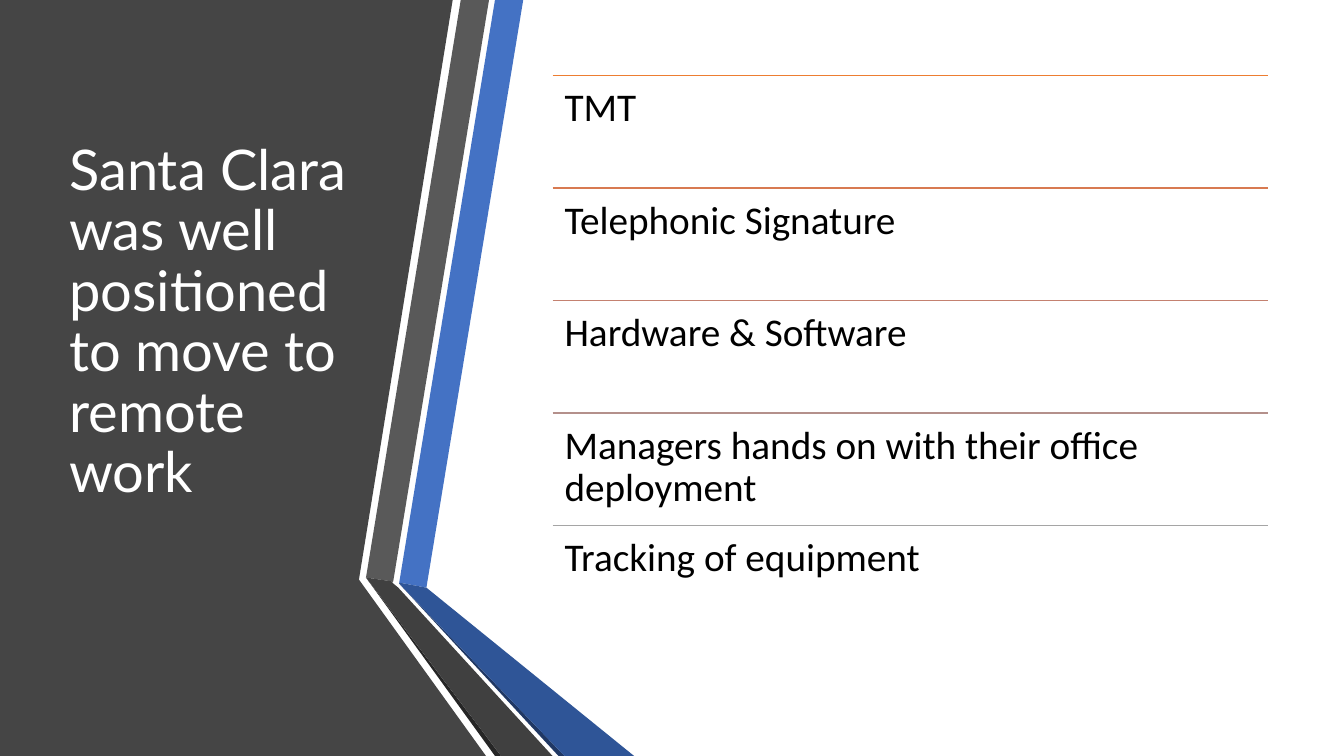
from collections import namedtuple

from lxml.etree import SubElement
from pptx import Presentation
from pptx.dml.color import RGBColor
from pptx.enum.shapes import MSO_CONNECTOR as Connector
from pptx.enum.text import MSO_ANCHOR as Anchor, PP_ALIGN as Align
from pptx.oxml.ns import qn
from pptx.util import Inches, Pt

Box = namedtuple("Box", "left top width height")

WIDTH, HEIGHT = 13.33, 7.5
WHITE = RGBColor(0xFF, 0xFF, 0xFF)
BLACK = RGBColor(0x00, 0x00, 0x00)
CHARCOAL = RGBColor(0x45, 0x45, 0x45)
GREY = RGBColor(0x59, 0x59, 0x59)
DARK_GREY = RGBColor(0x40, 0x40, 0x40)
DEEP_GREY = RGBColor(0x26, 0x26, 0x26)
BLUE = RGBColor(0x44, 0x72, 0xC4)
DARK_BLUE = RGBColor(0x2F, 0x55, 0x97)
DEEP_BLUE = RGBColor(0x20, 0x38, 0x64)

PANEL = [(0, 0), (4.49, 0), (3.56, 5.75), (4.82, 7.5), (0, 7.5)]
RIBBONS = [
    (BLUE, [(3.96, 5.78), (4.23, 5.83), (5.19, 0), (4.91, 0)]),
    (GREY, [(4.85, 0), (4.57, 0), (3.63, 5.73), (3.9, 5.77)]),
    (DEEP_GREY, [(3.63, 5.73), (4.91, 7.5), (4.97, 7.5)]),
    (DEEP_BLUE, [(3.96, 5.79), (5.54, 7.5), (5.6, 7.5)]),
    (DARK_BLUE, [(3.96, 5.79), (5.6, 7.5), (6.29, 7.5), (4.23, 5.83), (3.96, 5.78)]),
    (DARK_GREY, [(5.48, 7.5), (3.95, 5.83), (3.89, 5.78), (3.9, 5.77),
                 (3.63, 5.73), (4.97, 7.5)]),
]
TITLE = "Santa Clara was well positioned to move to remote work"
ITEMS = [
    ("TMT", RGBColor(0xED, 0x7D, 0x31)),
    ("Telephonic Signature", RGBColor(0xD8, 0x7A, 0x51)),
    ("Hardware & Software", RGBColor(0xC4, 0x81, 0x70)),
    ("Managers hands on with their office deployment", RGBColor(0xB4, 0x90, 0x8B)),
    ("Tracking of equipment", RGBColor(0xA5, 0xA5, 0xA5)),
]


def add_polygon(shapes, box, points, color):
    corners = [(Inches(x), Inches(y)) for x, y in points]
    builder = shapes.build_freeform(*corners[0])
    builder.add_line_segments(corners[1:], close=True)
    shape = builder.convert_to_shape(Inches(box.left), Inches(box.top))
    shape.shadow.inherit = False
    shape.fill.solid()
    shape.fill.fore_color.rgb = color
    shape.line.fill.background()


def add_text(shapes, box, text, font, frame):
    text_frame = shapes.add_textbox(*map(Inches, box)).text_frame
    for name, value in {"word_wrap": True, **frame}.items():
        setattr(text_frame, name, value)
    paragraph = text_frame.paragraphs[0]
    paragraph.alignment = Align.LEFT
    paragraph.line_spacing = 0.9
    run = paragraph.add_run()
    run.text = text
    for name in ("name", "size"):
        setattr(run.font, name, font[name])
    run.font.color.rgb = font["color"]


def add_rule(shapes, left, top, width, color):
    rule = shapes.add_connector(
        Connector.STRAIGHT, *map(Inches, (left, top, left + width, top)))
    rule.line.color.rgb = color
    rule.line.width = Pt(1)
    SubElement(rule._element.spPr, qn("a:effectLst"))


def draw_backdrop(slide, box):
    add_polygon(slide.shapes, box, PANEL, CHARCOAL)
    ribbons = slide.shapes.add_group_shape().shapes
    for color, points in RIBBONS:
        add_polygon(ribbons, box, points, color)


def draw_title(slide, box):
    font = {"name": "Lato", "size": Pt(40), "color": WHITE}
    frame = {"vertical_anchor": Anchor.MIDDLE, "margin_bottom": Inches(0.71)}
    add_text(slide.shapes, box, TITLE, font, frame)


def draw_list(slide, box):
    shapes = slide.shapes.add_group_shape().shapes
    font = {"name": "Calibri", "size": Pt(28), "color": BLACK}
    sides = ("left", "top", "right", "bottom")
    frame = {f"margin_{side}": Inches(0.12) for side in sides}
    row_height = box.height / len(ITEMS)
    for row, (text, color) in enumerate(ITEMS):
        top = box.top + row * row_height
        add_rule(shapes, box.left, top, box.width, color)
        add_text(shapes, Box(box.left, top, box.width, row_height), text, font, frame)


def main():
    presentation = Presentation()
    presentation.slide_width = Inches(WIDTH)
    presentation.slide_height = Inches(HEIGHT)
    slide = presentation.slides.add_slide(presentation.slide_layouts[6])
    draw_backdrop(slide, Box(0, 0, WIDTH, HEIGHT))
    draw_title(slide, Box(0.59, 0.75, 3.04, 5.58))
    draw_list(slide, Box(5.48, 0.75, 7.1, 5.58))
    presentation.save("out.pptx")


if __name__ == "__main__":
    main()
